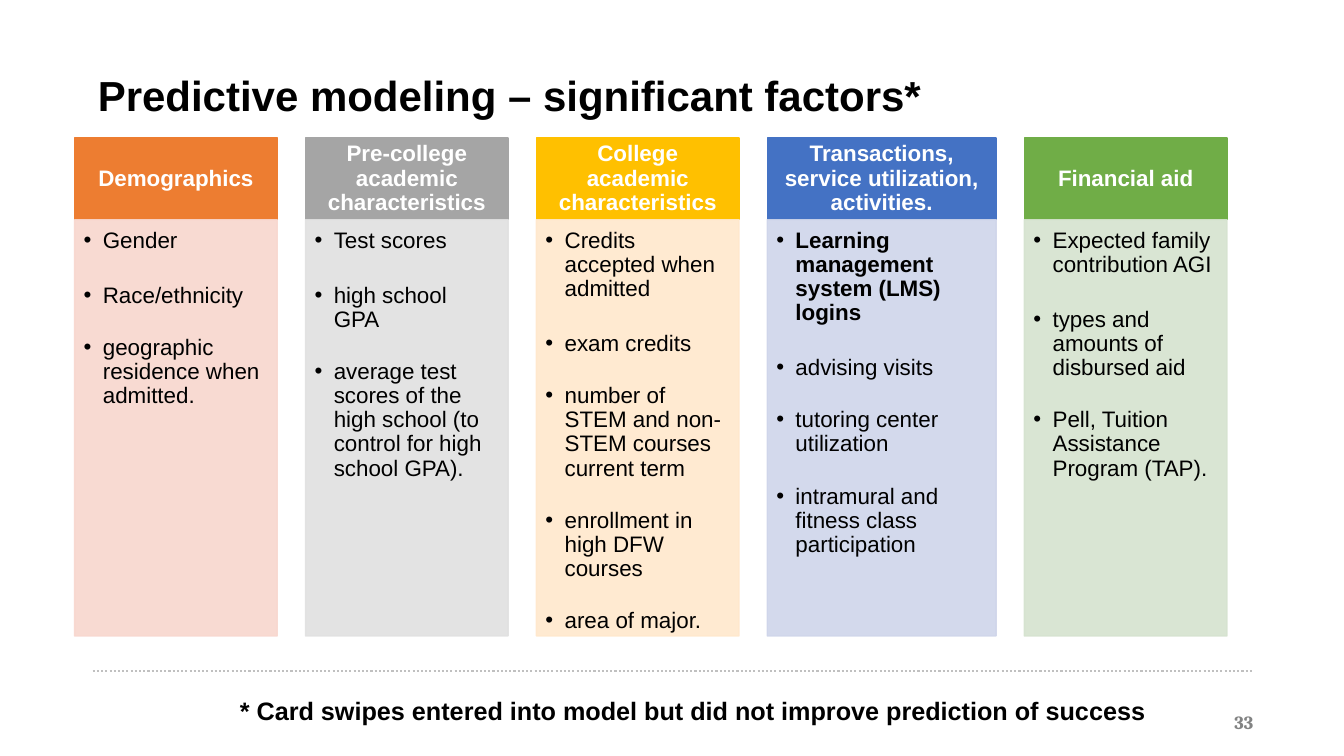
"""Build the slide on significant factors in predictive modeling."""
import lxml.etree
import pptx
import pptx.dml.color
import pptx.enum.dml
import pptx.enum.shapes
import pptx.enum.text
import pptx.oxml.ns
import pptx.util

RGBColor = pptx.dml.color.RGBColor
Inches = pptx.util.Inches
Pt = pptx.util.Pt
qn = pptx.oxml.ns.qn
ALIGN = pptx.enum.text.PP_ALIGN
ANCHOR = pptx.enum.text.MSO_ANCHOR

BLACK = RGBColor(0x00, 0x00, 0x00)
WHITE = RGBColor(0xFF, 0xFF, 0xFF)
RULE_GRAY = RGBColor(0xC0, 0xC0, 0xC0)
NUMBER_GRAY = RGBColor(0x82, 0x83, 0x83)
ORANGE, PALE_ORANGE = RGBColor(0xED, 0x7D, 0x31), RGBColor(0xF8, 0xD7, 0xCE)
GRAY, PALE_GRAY = RGBColor(0xA5, 0xA5, 0xA5), RGBColor(0xE1, 0xE1, 0xE1)
GOLD, PALE_GOLD = RGBColor(0xFF, 0xC0, 0x00), RGBColor(0xFF, 0xE8, 0xCC)
BLUE, PALE_BLUE = RGBColor(0x44, 0x72, 0xC4), RGBColor(0xCF, 0xD5, 0xEA)
GREEN, PALE_GREEN = RGBColor(0x70, 0xAD, 0x47), RGBColor(0xD5, 0xE3, 0xCF)

LEFT, GAP = 0.74, 0.28
HEADER_TOP, HEADER_HEIGHT, PANEL_HEIGHT = 1.37, 0.81, 4.13

FACTORS = [
    ("Demographics", 2.01, ORANGE, PALE_ORANGE,
     ["Gender", "Race/ethnicity", "geographic residence when admitted."]),
    ("Pre-college academic characteristics", 2.01, GRAY, PALE_GRAY,
     ["Test scores", "high school GPA",
      "average test scores of the high school (to control for high school GPA)."]),
    ("College academic characteristics", 2.01, GOLD, PALE_GOLD,
     ["Credits accepted when admitted", "exam credits",
      "number of STEM and non-STEM courses current term",
      "enrollment in high DFW courses", "area of major."]),
    ("Transactions, service utilization, activities.", 2.27, BLUE, PALE_BLUE,
     ["Learning management system (LMS) logins", "advising visits",
      "tutoring center utilization", "intramural and fitness class participation"]),
    ("Financial aid", 2.01, GREEN, PALE_GREEN,
     ["Expected family contribution AGI", "types and amounts of disbursed aid",
      "Pell, Tuition Assistance Program (TAP)."]),
]
BOLD_ITEM = "Learning management system (LMS) logins"


def set_font(paragraph, size, color, bold, name="Arial"):
    paragraph.font.name = name
    paragraph.font.size = Pt(size)
    paragraph.font.bold = bold
    paragraph.font.color.rgb = color


def add_block(left, top, width, height, color, margins, anchor):
    block = slide.shapes.add_shape(
        pptx.enum.shapes.MSO_SHAPE.RECTANGLE,
        Inches(left), Inches(top), Inches(width), Inches(height))
    block.shadow.inherit = False
    block.fill.solid()
    block.fill.fore_color.rgb = color
    block.line.color.rgb = color
    block.line.width = Pt(1)
    frame = block.text_frame
    frame.word_wrap = True
    frame.vertical_anchor = anchor
    (frame.margin_left, frame.margin_top,
     frame.margin_right, frame.margin_bottom) = map(Inches, margins)
    return block


presentation = pptx.Presentation()
presentation.slide_width = Inches(13.33)
presentation.slide_height = Inches(7.5)
slide = presentation.slides.add_slide(presentation.slide_layouts[5])

title = slide.shapes.title
title.left, title.top, title.width, title.height = map(Inches, (0.87, 0.74, 11.65, 0.9))
title.text_frame.text = "Predictive modeling – significant factors*"
title.text_frame.auto_size = pptx.enum.text.MSO_AUTO_SIZE.NONE
title.text_frame.vertical_anchor = ANCHOR.TOP
heading = title.text_frame.paragraphs[0]
heading.alignment = ALIGN.LEFT
heading.line_spacing = 0.8
set_font(heading, 30, BLACK, True)

rule = slide.shapes.add_connector(
    pptx.enum.shapes.MSO_CONNECTOR.STRAIGHT,
    Inches(0.92), Inches(6.66), Inches(12.42), Inches(6.66))
rule.line.color.rgb = RULE_GRAY
rule.line.width = Pt(1.5)
rule.line.dash_style = pptx.enum.dml.MSO_LINE.ROUND_DOT
lxml.etree.SubElement(rule.element.spPr, qn("a:effectLst"))

left = LEFT
for name, width, color, pale_color, items in FACTORS:
    header = add_block(left, HEADER_TOP, width, HEADER_HEIGHT, color,
                       (0.12, 0.07, 0.12, 0.07), ANCHOR.MIDDLE)
    paragraph = header.text_frame.paragraphs[0]
    paragraph.text = name
    paragraph.alignment = ALIGN.CENTER
    paragraph.line_spacing = 0.9
    set_font(paragraph, 16, WHITE, True)

    panel = add_block(left, HEADER_TOP + HEADER_HEIGHT, width, PANEL_HEIGHT, pale_color,
                      (0.09, 0.09, 0.12, 0.14), ANCHOR.TOP)
    for color_element in panel.element.spPr.iter(qn("a:srgbClr")):
        lxml.etree.SubElement(color_element, qn("a:alpha"), val="90000")
    for index, item in enumerate(items):
        frame = panel.text_frame
        paragraph = frame.add_paragraph() if index else frame.paragraphs[0]
        paragraph.text = item
        paragraph.alignment = ALIGN.LEFT
        paragraph.line_spacing = 0.9
        if index < len(items) - 1:
            paragraph.space_after = Pt(20 if index else 22)
        properties = paragraph._p.get_or_add_pPr()
        properties.set("marL", str(Inches(0.19)))
        properties.set("indent", str(-Inches(0.19)))
        lxml.etree.SubElement(properties, qn("a:buFont"), typeface="Arial")
        lxml.etree.SubElement(properties, qn("a:buChar"), char="•")
        set_font(paragraph, 16, BLACK, item == BOLD_ITEM)
    left += width + GAP

footnote = slide.shapes.add_textbox(Inches(2.28), Inches(6.85), Inches(9.28), Inches(0.4))
footnote.text_frame.word_wrap = False
paragraph = footnote.text_frame.paragraphs[0]
paragraph.text = "* Card swipes entered into model but did not improve prediction of success"
set_font(paragraph, 18, BLACK, True)

number = slide.shapes.add_textbox(Inches(9.56), Inches(6.96), Inches(3), Inches(0.4))
number.text_frame.word_wrap = True
number.text_frame.vertical_anchor = ANCHOR.MIDDLE
number.text_frame.margin_right = Inches(0.13)
paragraph = number.text_frame.paragraphs[0]
paragraph.text = "33"
paragraph.alignment = ALIGN.RIGHT
set_font(paragraph, 13.3, NUMBER_GRAY, True, "Cambria")

presentation.save("out.pptx")
